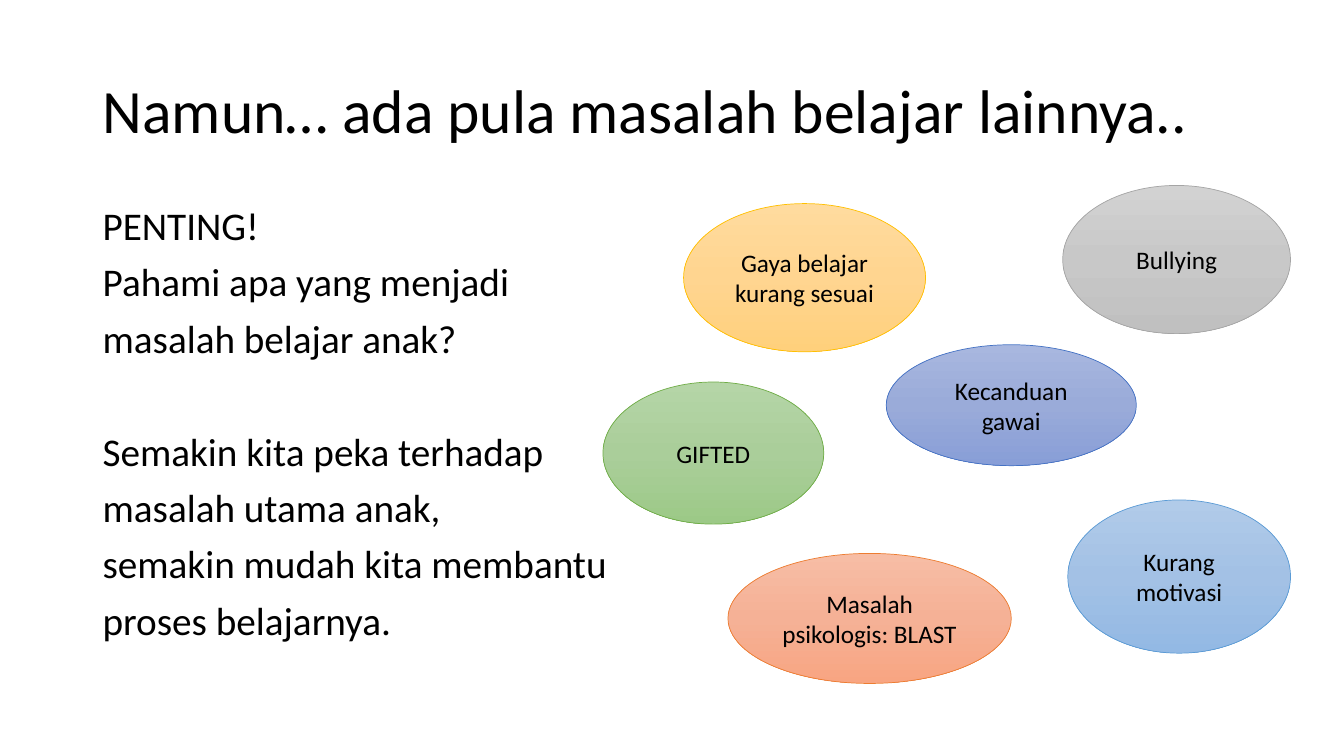
from copy import deepcopy
from dataclasses import dataclass

from pptx import Presentation
from pptx.dml.color import RGBColor
from pptx.enum.shapes import MSO_SHAPE
from pptx.enum.text import MSO_ANCHOR, PP_ALIGN
from pptx.oxml.ns import qn
from pptx.slide import Slide
from pptx.text.text import TextFrame, _Paragraph
from pptx.util import Inches, Pt

OVAL = MSO_SHAPE.OVAL
MIDDLE = MSO_ANCHOR.MIDDLE
TOP = MSO_ANCHOR.TOP
CENTER = PP_ALIGN.CENTER


@dataclass(frozen=True)
class Palette:
    """Line colour and the top, middle and bottom colours of a gradient."""

    line: str
    top: str
    middle: str
    bottom: str


@dataclass(frozen=True)
class Theme:
    """Font, type sizes, spacing and colours of the slide."""

    font: str = "Calibri"
    text: str = "000000"
    title_size: float = 44
    body_size: float = 28
    bubble_size: float = 18
    line_spacing: float = 0.9
    paragraph_gap: float = 10
    section_gap: float = 50.5
    outline: float = 0.5
    gold: Palette = Palette("FFC000", "FFDB9E", "FFD590", "FFD07C")
    sky: Palette = Palette("5B9BD5", "B1CBE9", "A3C1E5", "93B9E4")
    gray: Palette = Palette("A5A5A5", "D2D2D2", "C8C8C8", "C0C0C0")
    blue: Palette = Palette("4472C4", "A8B7DF", "9AABD9", "889ED7")
    green: Palette = Palette("70AD47", "B5D5A7", "AACE9A", "9CC987")
    orange: Palette = Palette("ED7D31", "F7BDA5", "F5B196", "F8A582")


THEME = Theme()


@dataclass(frozen=True)
class Box:
    """Position and size in inches."""

    left: float
    top: float
    width: float
    height: float

    def lengths(self) -> tuple[Inches, Inches, Inches, Inches]:
        """Return the four measures as lengths."""
        return Inches(self.left), Inches(self.top), Inches(self.width), Inches(self.height)


@dataclass(frozen=True)
class Bubble:
    """One learning problem shown in an ellipse."""

    label: str
    box: Box
    palette: Palette


TITLE = "Namun… ada pula masalah belajar lainnya.."
SECTIONS = (
    ("PENTING!", "Pahami apa yang menjadi", "masalah belajar anak?"),
    (
        "Semakin kita peka terhadap",
        "masalah utama anak,",
        "semakin mudah kita membantu",
        "proses belajarnya.",
    ),
)
BUBBLES = (
    Bubble("Gaya belajar kurang sesuai", Box(6.78, 2.02, 2.4, 1.47), THEME.gold),
    Bubble("Kurang motivasi", Box(10.59, 4.96, 2.21, 1.52), THEME.sky),
    Bubble("Bullying", Box(10.54, 1.84, 2.26, 1.47), THEME.gray),
    Bubble("Kecanduan gawai", Box(8.79, 3.42, 2.48, 1.2), THEME.blue),
    Bubble("GIFTED", Box(5.98, 3.79, 2.19, 1.41), THEME.green),
    Bubble("Masalah psikologis: BLAST", Box(7.22, 5.49, 2.81, 1.29), THEME.orange),
)


def add_run(paragraph: _Paragraph, text: str, size: float) -> None:
    """Add one run in the theme font and text colour."""
    run = paragraph.add_run()
    run.text = text
    run.font.name = THEME.font
    run.font.size = Pt(size)
    run.font.color.rgb = RGBColor.from_string(THEME.text)


def add_text_frame(slide: Slide, box: Box, anchor: MSO_ANCHOR) -> TextFrame:
    """Add a wrapping text box and return its text frame."""
    frame = slide.shapes.add_textbox(*box.lengths()).text_frame
    frame.word_wrap = True
    frame.vertical_anchor = anchor
    return frame


def add_title(slide: Slide) -> None:
    """Add the slide title."""
    paragraph = add_text_frame(slide, Box(0.92, 0.4, 11.5, 1.45), MIDDLE).paragraphs[0]
    paragraph.line_spacing = THEME.line_spacing
    add_run(paragraph, TITLE, THEME.title_size)


def add_body(slide: Slide) -> None:
    """Add the message, with a wide gap between its sections."""
    frame = add_text_frame(slide, Box(0.92, 2, 12.26, 4.76), TOP)
    paragraph = frame.paragraphs[0]
    for section_index, section in enumerate(SECTIONS):
        for line_index, line in enumerate(section):
            if section_index or line_index:
                paragraph = frame.add_paragraph()
            starts_section = section_index > 0 and line_index == 0
            gap = THEME.section_gap if starts_section else THEME.paragraph_gap
            paragraph.space_before = Pt(gap)
            paragraph.line_spacing = THEME.line_spacing
            add_run(paragraph, line, THEME.body_size)


def add_bubble(slide: Slide, bubble: Bubble) -> None:
    """Add an ellipse with a vertical three-colour gradient."""
    shape = slide.shapes.add_shape(OVAL, *bubble.box.lengths())
    shape.shadow.inherit = False
    palette = bubble.palette
    shape.line.color.rgb = RGBColor.from_string(palette.line)
    shape.line.width = Pt(THEME.outline)

    shape.fill.gradient()
    shape.fill.gradient_angle = 270
    stop_list = shape.element.spPr.find(qn("a:gradFill")).find(qn("a:gsLst"))
    stop_list.insert(1, deepcopy(stop_list[0]))
    colors = (palette.top, palette.middle, palette.bottom)
    for stop, position, color in zip(shape.fill.gradient_stops, (0, 0.5, 1), colors):
        stop.position = position
        stop.color.rgb = RGBColor.from_string(color)

    frame = shape.text_frame
    frame.word_wrap = True
    frame.vertical_anchor = MIDDLE
    paragraph = frame.paragraphs[0]
    paragraph.alignment = CENTER
    add_run(paragraph, bubble.label, THEME.bubble_size)


def main() -> None:
    """Build and save the slide."""
    presentation = Presentation()
    presentation.slide_width = Inches(13.33)
    presentation.slide_height = Inches(7.5)
    slide = presentation.slides.add_slide(presentation.slide_layouts[6])
    add_title(slide)
    add_body(slide)
    for bubble in BUBBLES:
        add_bubble(slide, bubble)
    presentation.save("out.pptx")


if __name__ == "__main__":
    main()
